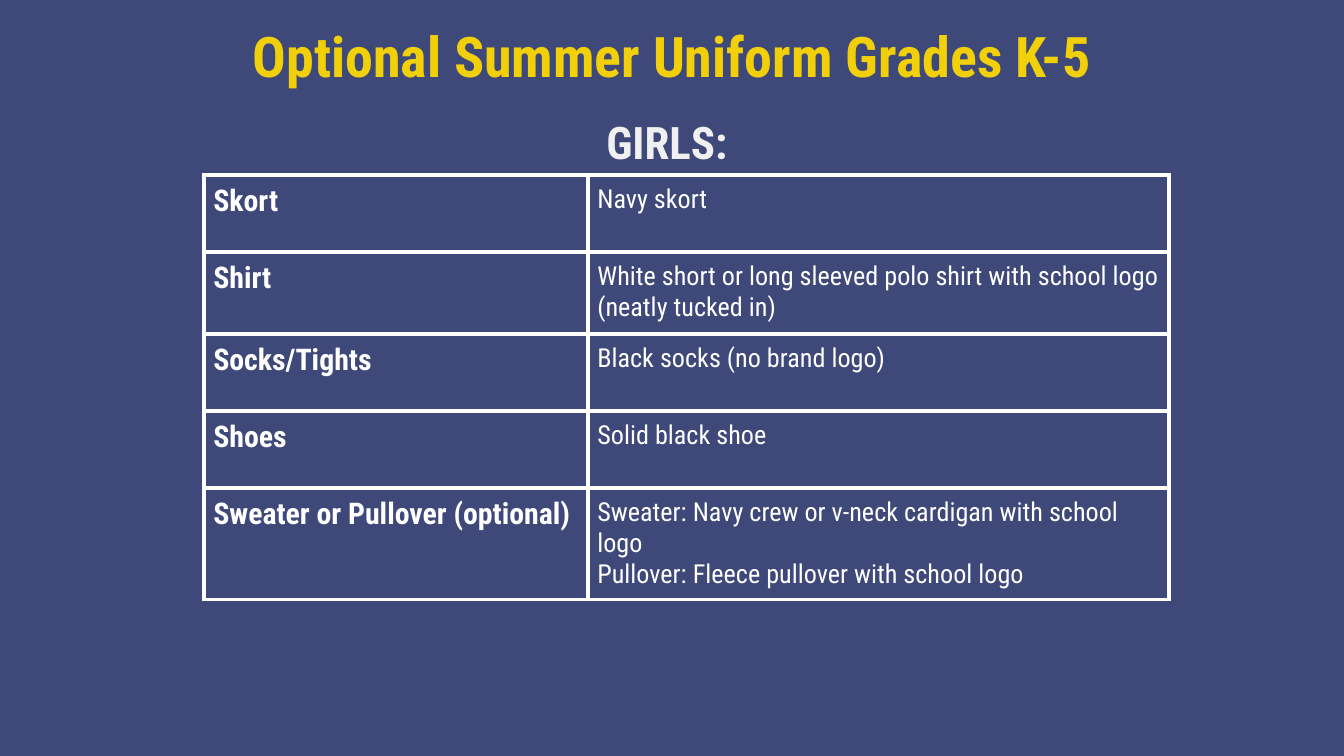
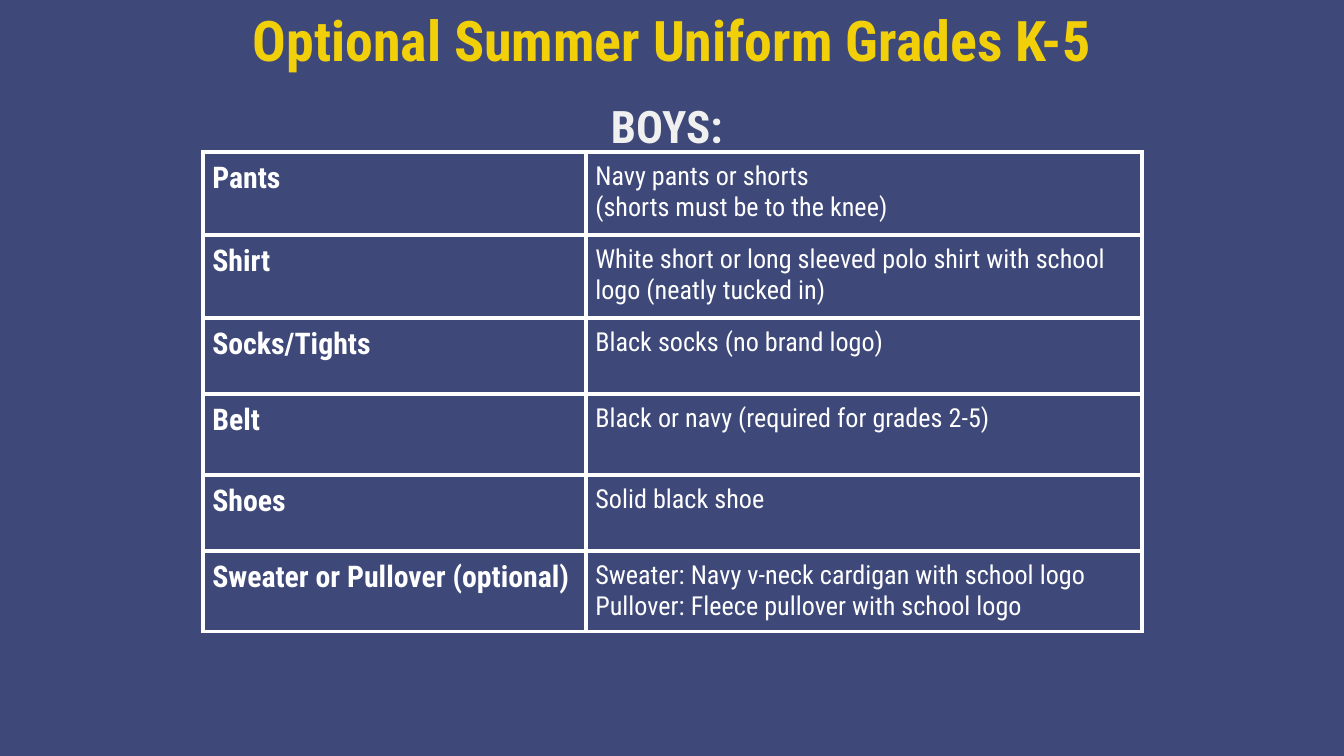
from dataclasses import dataclass

from lxml import etree
from pptx import Presentation
from pptx import util as u
from pptx.dml.color import RGBColor
from pptx.enum import text
from pptx.oxml import ns

EMU_PER_PX = 914400 / 134.4
SLIDE_WIDTH, SLIDE_HEIGHT = 1344, 756
TITLE = "Optional Summer Uniform Grades K-5"
SHIRT = ("Shirt", ["White short or long sleeved polo shirt with school logo (neatly tucked in)"])
SOCKS = ("Socks/Tights", ["Black socks (no brand logo)"])
SHOES = ("Shoes", ["Solid black shoe"])
PULLOVER = "Pullover: Fleece pullover with school logo"


@dataclass(frozen=True)
class Theme:
    """Colours, type sizes and line width shared by the slides."""
    font: str = "Roboto Condensed"
    background: str = "3E497A"
    title: str = "F1D00A"
    heading: str = "F0F0F0"
    table: str = "FFFFFF"
    title_size: int = 30
    heading_size: int = 24
    item_size: int = 16
    detail_size: int = 14
    border_width: float = 2.25


THEME = Theme()


def px(length):
    """Turn pixels into EMU."""
    return u.Emu(round(length * EMU_PER_PX))


def add_run(paragraph, words, size, color, bold):
    """Add one formatted run to a paragraph."""
    run = paragraph.add_run()
    run.text = words
    run.font.name = THEME.font
    run.font.size = u.Pt(size)
    run.font.bold = bold
    run.font.color.rgb = RGBColor.from_string(color)


def fill_placeholder(shape, box, words, size, color):
    """Place a placeholder and write one centred, unbulleted line in it."""
    shape.left, shape.top, shape.width, shape.height = map(px, box)
    frame = shape.text_frame
    frame.word_wrap = True
    frame.auto_size = text.MSO_AUTO_SIZE.NONE
    frame.vertical_anchor = text.MSO_ANCHOR.TOP
    frame.margin_left = frame.margin_right = u.Inches(0.1)
    frame.margin_top = frame.margin_bottom = u.Inches(0.1)
    paragraph = frame.paragraphs[0]
    paragraph.alignment = text.PP_ALIGN.CENTER
    paragraph.space_before = u.Pt(0)
    properties = paragraph._p.get_or_add_pPr()
    properties.set("marL", "0")
    properties.set("indent", "0")
    etree.SubElement(properties, ns.qn("a:buNone"))
    add_run(paragraph, words, size, color, True)
    return paragraph


def outline_cell(cell):
    """Draw the four borders of a table cell."""
    properties = cell._tc.get_or_add_tcPr()
    for position, side in enumerate("LRTB"):
        line = etree.Element(ns.qn(f"a:ln{side}"), w=str(u.Pt(THEME.border_width)))
        fill = etree.SubElement(line, ns.qn("a:solidFill"))
        etree.SubElement(fill, ns.qn("a:srgbClr"), val=THEME.table)
        properties.insert(position, line)


def fill_cell(cell, lines, size, bold):
    """Write lines in a transparent, outlined cell."""
    cell.fill.background()
    cell.margin_left = cell.margin_right = u.Inches(0.07)
    cell.margin_top = cell.margin_bottom = u.Inches(0.07)
    outline_cell(cell)
    frame = cell.text_frame
    for number, words in enumerate(lines):
        paragraph = frame.add_paragraph() if number else frame.paragraphs[0]
        add_run(paragraph, words, size, THEME.table, bold)


def add_uniform_table(slide, left, top, columns, heights, items):
    """Add a table with one garment and its rules in each row."""
    frame = slide.shapes.add_table(len(items), len(columns), px(left), px(top),
                                   px(sum(columns)), px(sum(heights)))
    table = frame.table
    table.first_row = table.horz_banding = False
    for column, width in zip(table.columns, columns):
        column.width = px(width)
    for row, height, (item, details) in zip(table.rows, heights, items):
        row.height = px(height)
        fill_cell(row.cells[0], [item], THEME.item_size, True)
        fill_cell(row.cells[1], details, THEME.detail_size, False)


def add_uniform_slide(presentation, title_top, heading, heading_box):
    """Add a slide with the shared title and a group heading."""
    slide = presentation.slides.add_slide(presentation.slide_layouts[1])
    fill_placeholder(slide.shapes.title, (0, title_top, SLIDE_WIDTH, 85), TITLE,
                     THEME.title_size, THEME.title)
    paragraph = fill_placeholder(slide.placeholders[1], heading_box, heading,
                                 THEME.heading_size, THEME.heading)
    paragraph.line_spacing = 1.15
    return slide


def main():
    """Build and save the presentation."""
    presentation = Presentation()
    presentation.slide_width, presentation.slide_height = px(SLIDE_WIDTH), px(SLIDE_HEIGHT)
    background = presentation.slide_master.background.fill
    background.solid()
    background.fore_color.rgb = RGBColor.from_string(THEME.background)

    girls = add_uniform_slide(presentation, 8, "GIRLS: ", (332, 93, 680, 63))
    add_uniform_table(girls, 204, 175, (384, 581), (77, 82, 77, 77, 71), [
        ("Skort", ["Navy skort"]),
        SHIRT,
        SOCKS,
        SHOES,
        ("Sweater or Pullover (optional)",
         ["Sweater: Navy crew or v-neck cardigan with school logo", PULLOVER]),
    ])

    boys = add_uniform_slide(presentation, -8, "BOYS: ", (324, 77, 696, 66))
    add_uniform_table(boys, 203, 152, (383, 556), (83, 83, 76, 81, 76, 69), [
        ("Pants", ["Navy pants or shorts", "(shorts must be to the knee)"]),
        SHIRT,
        SOCKS,
        ("Belt", ["Black or navy (required for grades 2-5)"]),
        SHOES,
        ("Sweater or Pullover (optional)",
         ["Sweater: Navy v-neck cardigan with school logo", PULLOVER]),
    ])
    presentation.save("out.pptx")


if __name__ == "__main__":
    main()
